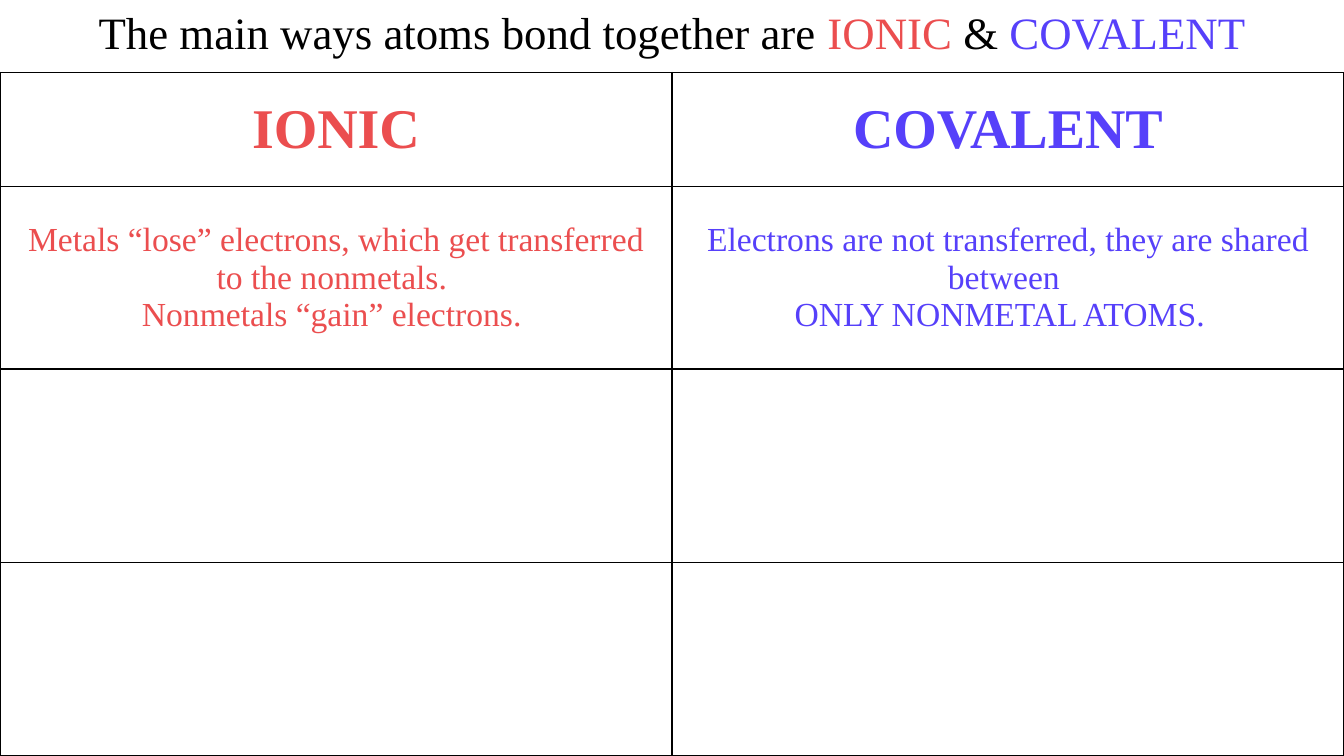
from lxml.etree import SubElement
from pptx import Presentation
from pptx.dml.color import RGBColor
from pptx.enum.text import MSO_ANCHOR, MSO_AUTO_SIZE, PP_ALIGN
from pptx.oxml.ns import qn
from pptx.util import Inches, Pt

COLORS = {"black": "000000", "white": "FFFFFF", "ionic": "EB4E4F", "covalent": "5640FA"}
FONT = "Times New Roman"
WIDTH, HEIGHT, TABLE_TOP = 13.33, 7.5, 0.72
ROW_HEIGHTS = [1.13, 1.81, 1.92, 1.92]
TITLE = [
    ("The main ways atoms bond together are ", "black"),
    ("IONIC", "ionic"),
    (" & ", "black"),
    ("COVALENT", "covalent"),
]
BONDS = {
    "ionic": [
        ["Metals “lose” electrons, which get transferred", "to the nonmetals. "],
        ["Nonmetals “gain” electrons. "],
    ],
    "covalent": [
        ["Electrons are not transferred, they are shared between ", "ONLY NONMETAL ATOMS.  "],
    ],
}


def add_run(p, text, size, color, bold=False):
    """Append one formatted run to a centred paragraph."""
    p.alignment = PP_ALIGN.CENTER
    r = p.add_run()
    r.text = text
    r.font.name = FONT
    r.font.size = Pt(size)
    r.font.bold = bold
    r.font.color.rgb = RGBColor.from_string(COLORS[color])


def add_title(s):
    """Place the title and write its coloured runs."""
    sp = s.shapes.title
    sp.left, sp.top, sp.width, sp.height = map(Inches, (0, 0, WIDTH, 0.64))
    tf = sp.text_frame
    tf.word_wrap = True
    tf.auto_size = MSO_AUTO_SIZE.NONE
    tf.vertical_anchor = MSO_ANCHOR.TOP
    for text, color in TITLE:
        add_run(tf.paragraphs[0], text, 32, color)


def style_cell(cell):
    """Give a cell thin black borders, a white fill and middle anchoring."""
    cell.vertical_anchor = MSO_ANCHOR.MIDDLE
    tc_pr = cell._tc.get_or_add_tcPr()
    for side in ("lnL", "lnR", "lnT", "lnB"):
        ln = SubElement(tc_pr, qn(f"a:{side}"), w=str(Pt(1)))
        fill = SubElement(ln, qn("a:solidFill"))
        SubElement(fill, qn("a:srgbClr"), val=COLORS["black"])
    cell.fill.solid()
    cell.fill.fore_color.rgb = RGBColor.from_string(COLORS["white"])


def write_cell(cell, paragraphs, size, color, bold=False):
    """Write paragraphs, each a list of lines, into a cell."""
    tf = cell.text_frame
    for i, lines in enumerate(paragraphs):
        p = tf.add_paragraph() if i else tf.paragraphs[0]
        for j, line in enumerate(lines):
            if j:
                p.add_line_break()
            add_run(p, line, size, color, bold)


def add_bond_table(s):
    """Add the two-column comparison with blank rows below."""
    table = s.shapes.add_table(
        len(ROW_HEIGHTS), len(BONDS), Inches(0), Inches(TABLE_TOP),
        Inches(WIDTH), Inches(HEIGHT - TABLE_TOP),
    ).table
    for row, height in zip(table.rows, ROW_HEIGHTS):
        row.height = Inches(height)
    for cell in table.iter_cells():
        style_cell(cell)
    for col, (bond, paragraphs) in enumerate(BONDS.items()):
        write_cell(table.cell(0, col), [[bond.upper()]], 40, bond, True)
        write_cell(table.cell(1, col), paragraphs, 24, bond)


def main():
    """Build and save the slide."""
    prs = Presentation()
    prs.slide_width, prs.slide_height = Inches(WIDTH), Inches(HEIGHT)
    s = prs.slides.add_slide(prs.slide_layouts[5])
    add_title(s)
    add_bond_table(s)
    prs.save("out.pptx")


if __name__ == "__main__":
    main()
